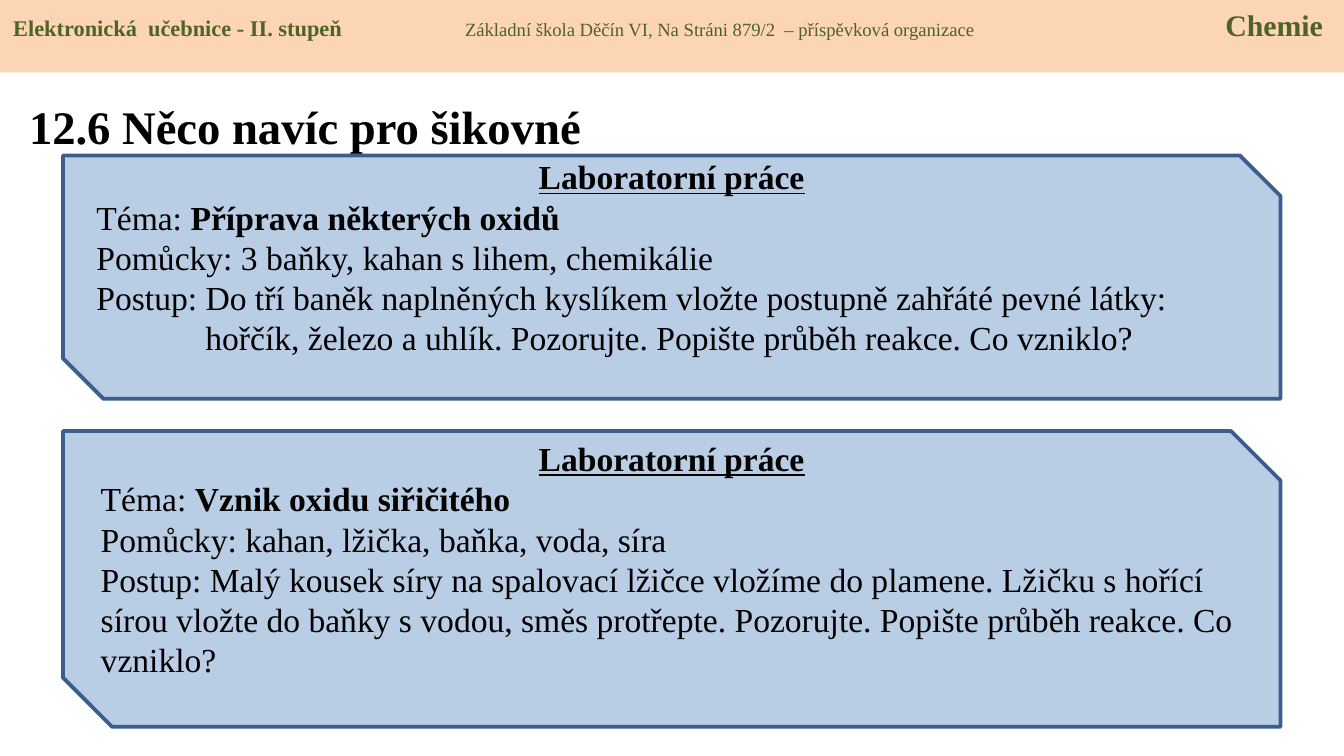
from lxml.etree import SubElement
from pptx import Presentation
from pptx.dml.color import RGBColor
from pptx.enum.shapes import MSO_SHAPE as Shape
from pptx.enum.text import MSO_ANCHOR as Anchor, PP_ALIGN as Align
from pptx.oxml.ns import qn
from pptx.util import Cm, Pt

COLORS = {
    "band": "FCD5B5",
    "band_text": "4F6228",
    "box": "B9CDE5",
    "box_line": "3A5F8C",
    "text": "000000",
}
FONT = "Times New Roman"
LINE_HEIGHT = Cm(0.76)


def color(name):
    return RGBColor.from_string(COLORS[name])


def add_run(paragraph, text, size=18, bold=False, underline=False, fill="text"):
    run = paragraph.add_run()
    run.text = text
    font = run.font
    font.name, font.size = FONT, Pt(size)
    font.bold, font.underline = bold, underline
    font.color.rgb = color(fill)


def add_panel(slide, kind, left, top, width, height, fill, line=None):
    shape = slide.shapes.add_shape(kind, left, top, width, height)
    shape.shadow.inherit = False
    shape.fill.solid()
    shape.fill.fore_color.rgb = color(fill)
    if line:
        shape.line.color.rgb = color(line)
        shape.line.width = Pt(2)
    else:
        shape.line.fill.background()
    return shape


def add_title(slide, text):
    shape = slide.shapes.add_textbox(Cm(0.3), Cm(1.55), Cm(14.4), Cm(1.65))
    frame = shape.text_frame
    frame.word_wrap = True
    frame.vertical_anchor = Anchor.MIDDLE
    add_run(frame.paragraphs[0], text, size=25, bold=True)


def add_header(slide, width):
    """Band whose three texts are placed with tab stops."""
    band = add_panel(slide, Shape.RECTANGLE, 0, 0, width, Cm(1.37), "band")
    band.text_frame.vertical_anchor = Anchor.TOP
    paragraph = band.text_frame.paragraphs[0]
    paragraph.alignment = Align.LEFT
    tabs = SubElement(paragraph._p.get_or_add_pPr(), qn("a:tabLst"))
    for position in (Cm(8.54), Cm(22.91)):
        SubElement(tabs, qn("a:tab"), pos=str(position), algn="l")
    add_run(paragraph, "Elektronická  učebnice - II. stupeň\t", size=12, bold=True, fill="band_text")
    add_run(paragraph, "Základní škola Děčín VI, Na Stráni 879/2  – příspěvková organizace\t",
            size=10, fill="band_text")
    add_run(paragraph, "Chemie", size=16, bold=True, fill="band_text")


def add_lab_box(slide, top, height, topic, tools, steps):
    """Lab task; step lines after the first are indented under it."""
    box = add_panel(slide, Shape.SNIP_2_DIAG_RECTANGLE, Cm(1.19), top, Cm(23.01), height,
                    "box", "box_line")
    frame = box.text_frame
    frame.word_wrap = True
    frame.vertical_anchor = Anchor.MIDDLE
    frame.margin_bottom = Cm(0.13) + LINE_HEIGHT

    heading = frame.paragraphs[0]
    heading.alignment = Align.CENTER
    add_run(heading, "Laboratorní práce", bold=True, underline=True)

    first_step, *more_steps = steps
    lines = [
        [("Téma: ", False), (topic, True)],
        [(f"Pomůcky: {tools}", False)],
        [(f"Postup: {first_step}", False)],
        *([(step, False)] for step in more_steps),
    ]
    for index, line in enumerate(lines):
        paragraph = frame.add_paragraph()
        paragraph.alignment = Align.LEFT
        if index > 2:
            paragraph._p.get_or_add_pPr().set("marL", str(Cm(2.06)))
        for text, bold in line:
            add_run(paragraph, text, bold=bold)


def main():
    presentation = Presentation()
    presentation.slide_width, presentation.slide_height = Cm(25.4), Cm(14.29)
    slide = presentation.slides.add_slide(presentation.slide_layouts[6])

    add_title(slide, "12.6 Něco navíc pro šikovné")
    add_header(slide, presentation.slide_width)
    add_lab_box(
        slide, Cm(2.94), Cm(4.6),
        "Příprava některých oxidů",
        "3 baňky, kahan s lihem, chemikálie",
        ["Do tří baněk naplněných kyslíkem vložte postupně zahřáté pevné látky:",
         "hořčík, železo a uhlík. Pozorujte. Popište průběh reakce. Co vzniklo?"],
    )
    add_lab_box(
        slide, Cm(8.15), Cm(5.59),
        "Vznik oxidu siřičitého",
        "kahan, lžička, baňka, voda, síra",
        ["Malý kousek síry na spalovací lžičce vložíme do plamene. Lžičku s hořící "
         "sírou vložte do baňky s vodou, směs protřepte. Pozorujte. Popište průběh "
         "reakce. Co vzniklo?"],
    )
    presentation.save("out.pptx")


if __name__ == "__main__":
    main()
